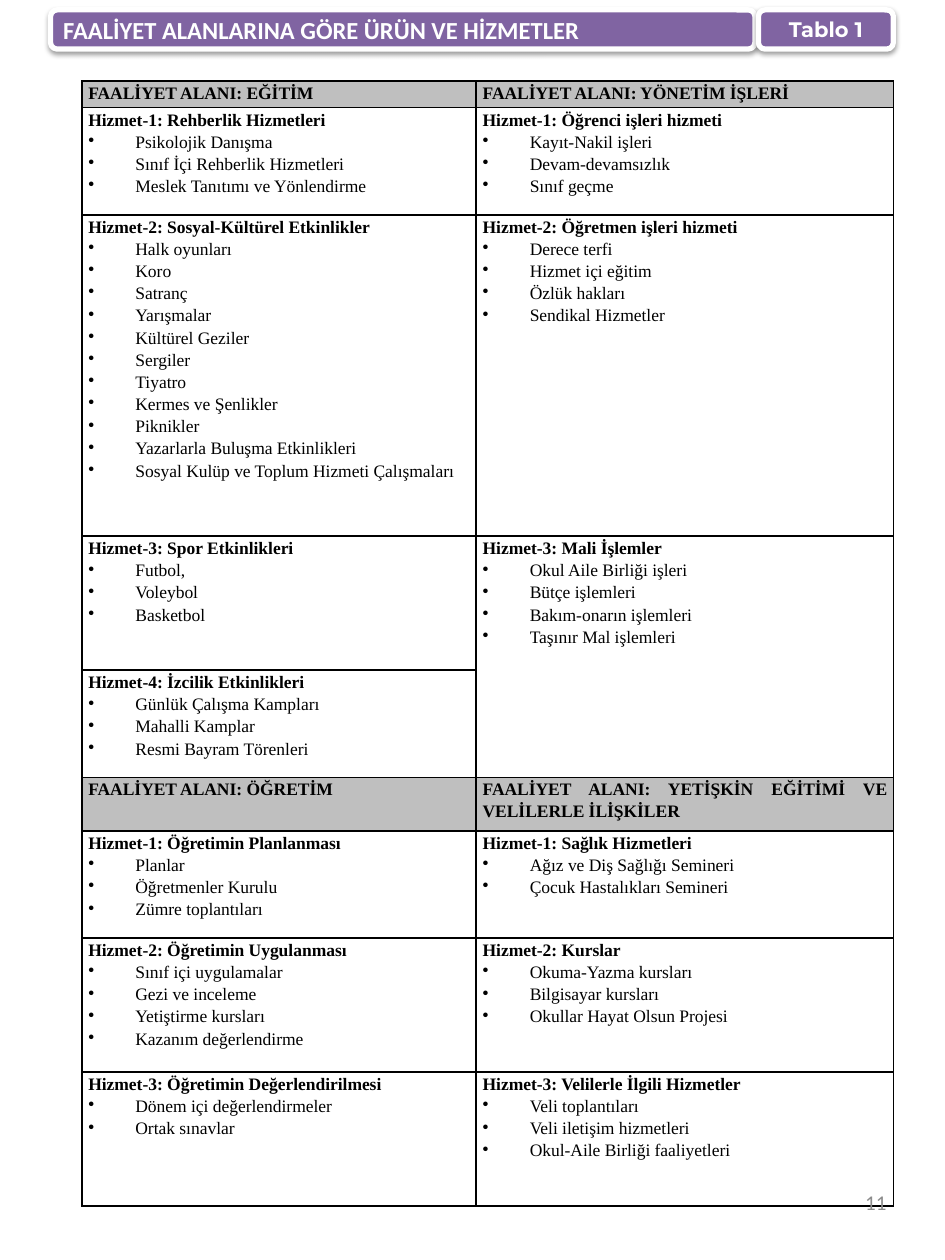
from lxml import etree
from pptx import Presentation, util as u
from pptx.dml.color import RGBColor
from pptx.enum import shapes, text
from pptx.oxml.ns import qn

TITLE = "FAALİYET ALANLARINA GÖRE ÜRÜN VE HİZMETLER"
TAG = "Tablo 1"
PAGE = "11"

# (height in lines, left cell, right cell); a cell is a heading and its items
ROWS = [
    (1, ("FAALİYET ALANI: EĞİTİM",), ("FAALİYET ALANI: YÖNETİM İŞLERİ",)),
    (4, ("Hizmet-1: Rehberlik Hizmetleri", "Psikolojik Danışma",
         "Sınıf İçi Rehberlik Hizmetleri", "Meslek Tanıtımı ve Yönlendirme"),
        ("Hizmet-1: Öğrenci işleri hizmeti", "Kayıt-Nakil işleri",
         "Devam-devamsızlık", "Sınıf geçme")),
    (12, ("Hizmet-2: Sosyal-Kültürel Etkinlikler", "Halk oyunları", "Koro",
          "Satranç", "Yarışmalar", "Kültürel Geziler", "Sergiler", "Tiyatro",
          "Kermes ve Şenlikler", "Piknikler", "Yazarlarla Buluşma Etkinlikleri",
          "Sosyal Kulüp ve Toplum Hizmeti Çalışmaları"),
         ("Hizmet-2: Öğretmen işleri hizmeti", "Derece terfi",
          "Hizmet içi eğitim", "Özlük hakları", "Sendikal Hizmetler")),
    (5, ("Hizmet-3: Spor Etkinlikleri", "Futbol,", "Voleybol", "Basketbol"),
        ("Hizmet-3: Mali İşlemler", "Okul Aile Birliği işleri",
         "Bütçe işlemleri", "Bakım-onarın işlemleri", "Taşınır Mal işlemleri")),
    (4, ("Hizmet-4: İzcilik Etkinlikleri", "Günlük Çalışma Kampları",
         "Mahalli Kamplar", "Resmi Bayram Törenleri"), ()),
    (2, ("FAALİYET ALANI: ÖĞRETİM",),
        ("FAALİYET ALANI: YETİŞKİN EĞİTİMİ VE VELİLERLE İLİŞKİLER",)),
    (4, ("Hizmet-1: Öğretimin Planlanması", "Planlar", "Öğretmenler Kurulu",
         "Zümre toplantıları"),
        ("Hizmet-1: Sağlık Hizmetleri", "Ağız ve Diş Sağlığı Semineri",
         "Çocuk Hastalıkları Semineri")),
    (5, ("Hizmet-2: Öğretimin Uygulanması", "Sınıf içi uygulamalar",
         "Gezi ve inceleme", "Yetiştirme kursları", "Kazanım değerlendirme"),
        ("Hizmet-2: Kurslar", "Okuma-Yazma kursları", "Bilgisayar kursları",
         "Okullar Hayat Olsun Projesi")),
    (5, ("Hizmet-3: Öğretimin Değerlendirilmesi", "Dönem içi değerlendirmeler",
         "Ortak sınavlar"),
        ("Hizmet-3: Velilerle İlgili Hizmetler", "Veli toplantıları",
         "Veli iletişim hizmetleri", "Okul-Aile Birliği faaliyetleri")),
]

THEME = {
    "bar": "8064A2", "head": "BFBFBF", "ink": "000000", "paper": "FFFFFF",
    "mute": "8C8C8C",
    "title": ("Calibri", 14), "tag": ("Montserrat", 12),
    "body": ("Times New Roman", 10), "page": ("Calibri", 12),
}
LEFT, TOP, LINE = 1.65, 1.63, 0.54
COLS = (7.95, 8.41)
BAR = (1.02, 0.2, 14.2, 0.79)
CHIP = (15.29, 0.2, 2.72, 0.79)
FOOT = (13.67, 23.55, 4.45, 1.35)
ALIGN = text.PP_ALIGN


def tint(key):
    return RGBColor.from_string(THEME[key])


def style(para, kind, ink, align, bold=False):
    font = para.font
    font.name, size = THEME[kind]
    font.size = u.Pt(size)
    font.bold = bold
    font.color.rgb = tint(ink)
    para.alignment = align


def node(parent, tag, **attrs):
    return etree.SubElement(parent, qn(tag), attrs)


def place(shape, box):
    shape.left, shape.top, shape.width, shape.height = map(u.Cm, box)


def label(shape, words, *look):
    frame = shape.text_frame
    frame.text = words
    frame.word_wrap = True
    frame.auto_size = text.MSO_AUTO_SIZE.NONE
    frame.vertical_anchor = text.MSO_ANCHOR.MIDDLE
    style(frame.paragraphs[0], *look)


def plate(slide, box):
    shape = slide.shapes.add_shape(
        shapes.MSO_SHAPE.ROUNDED_RECTANGLE, *map(u.Cm, box))
    shape.shadow.inherit = False
    shape.fill.solid()
    shape.fill.fore_color.rgb = tint("bar")
    shape.line.color.rgb = tint("paper")
    shape.line.width = u.Pt(3)
    glow = node(shape._element.spPr.find(qn("a:effectLst")), "a:outerShdw",
                blurRad=str(u.Pt(3.1)), dist=str(u.Pt(1.6)),
                dir="5400000", rotWithShape="0")
    shade = node(glow, "a:srgbClr", val=THEME["ink"])
    node(shade, "a:alpha", val="38000")
    return shape


def border(cell):
    props = cell._tc.get_or_add_tcPr()
    for spot, side in enumerate("LRTB"):
        edge = etree.Element(qn("a:ln" + side), w=str(u.Pt(1)))
        node(node(edge, "a:solidFill"), "a:srgbClr", val=THEME["ink"])
        props.insert(spot, edge)


def bullet(para):
    props = para._p.get_or_add_pPr()
    gap = u.Cm(0.95)
    props.set("marL", str(gap))
    props.set("indent", str(-gap))
    node(props, "a:buChar", char="•")


def write(cell, lines, head):
    cell.margin_left = cell.margin_right = u.Cm(0.13)
    cell.margin_top = cell.margin_bottom = 0
    if head:
        cell.fill.solid()
        cell.fill.fore_color.rgb = tint("head")
    else:
        cell.fill.background()
    border(cell)
    frame = cell.text_frame
    for num, line in enumerate(lines):
        para = frame.add_paragraph() if num else frame.paragraphs[0]
        para.text = line
        if num:
            bullet(para)
        style(para, "body", "ink", ALIGN.JUSTIFY, num == 0)
        para.line_spacing = 1.15


def grid(slide):
    high = sum(row[0] for row in ROWS) * LINE
    table = slide.shapes.add_table(
        len(ROWS), len(COLS),
        *map(u.Cm, (LEFT, TOP, sum(COLS), high))).table
    table.first_row = table.horz_banding = False
    for col, wide in zip(table.columns, COLS):
        col.width = u.Cm(wide)
    for r, (count, *cells) in enumerate(ROWS):
        table.rows[r].height = u.Cm(count * LINE)
        for c, lines in enumerate(cells):
            write(table.cell(r, c), lines, len(lines) == 1)
            if not lines:
                table.cell(r - 1, c).merge(table.cell(r, c))


def main():
    deck = Presentation()
    deck.slide_width, deck.slide_height = u.Cm(19.05), u.Cm(25.4)
    slide = deck.slides.add_slide(deck.slide_layouts[5])
    plate(slide, BAR)
    title = slide.shapes.title
    place(title, BAR)
    label(title, TITLE, "title", "paper", ALIGN.LEFT, True)
    slide.shapes._spTree.append(title._element)
    label(plate(slide, CHIP), TAG, "tag", "paper", ALIGN.CENTER, True)
    grid(slide)
    foot = slide.shapes.add_textbox(*map(u.Cm, FOOT))
    label(foot, PAGE, "page", "mute", ALIGN.RIGHT)
    deck.save("out.pptx")


if __name__ == "__main__":
    main()
